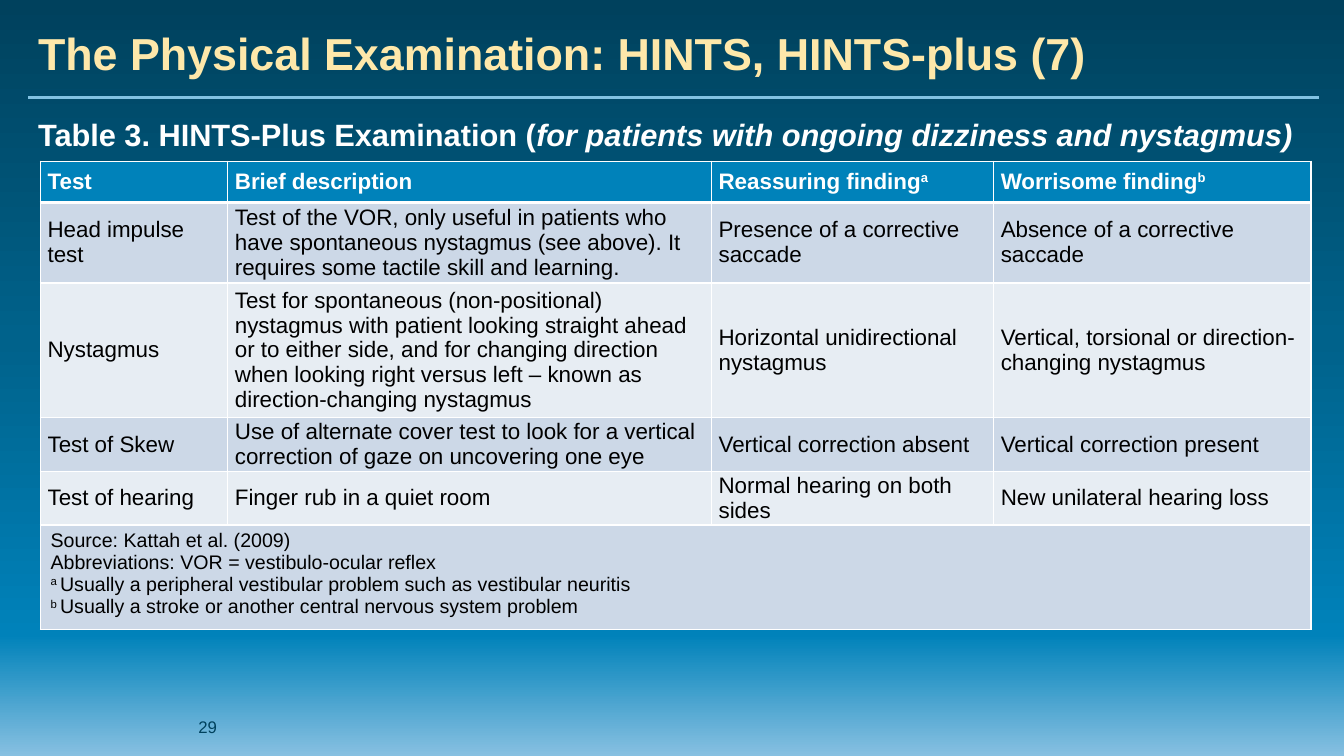
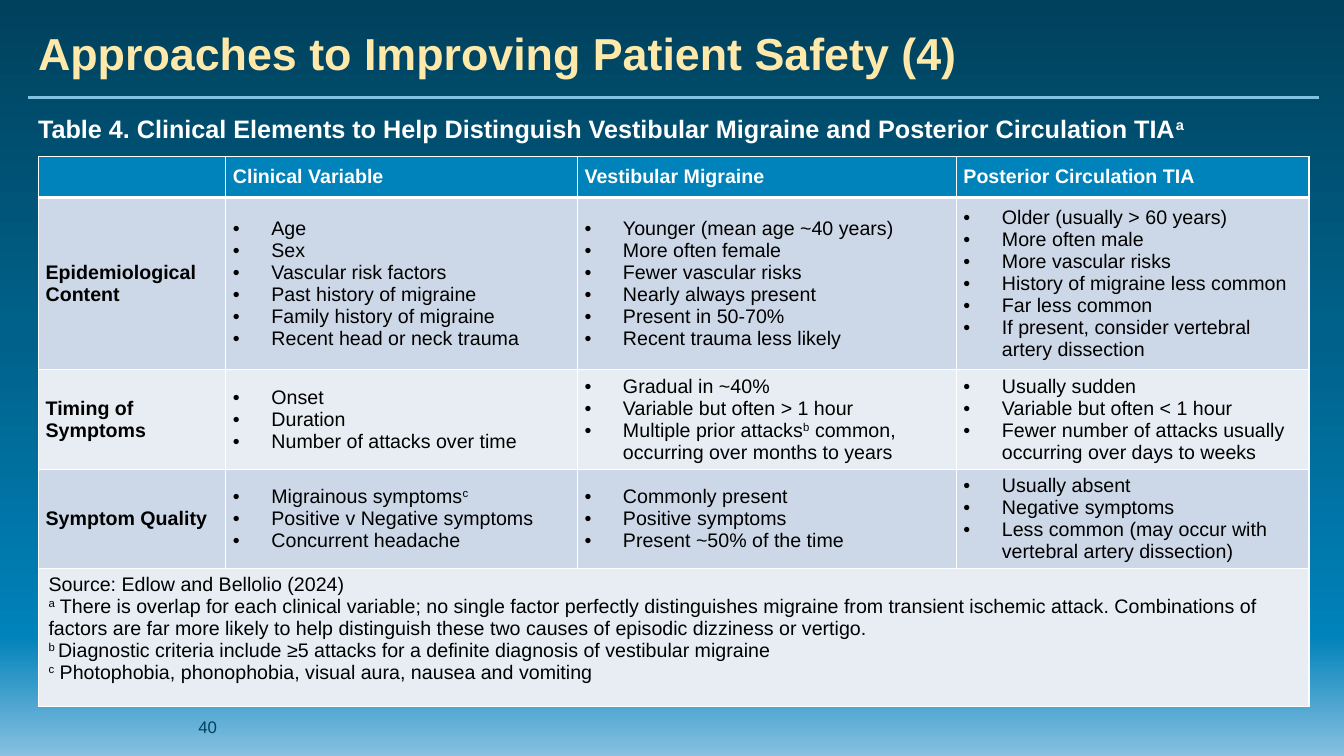
"""Build two table slides on the examination and diagnosis of dizziness."""
from lxml import etree
from pptx import Presentation
from pptx.dml.color import RGBColor
from pptx.enum.shapes import MSO_CONNECTOR as Connector
from pptx.enum.text import MSO_ANCHOR as Anchor
from pptx.oxml.ns import qn
from pptx.util import Cm, Pt

NAVY = RGBColor(0x00, 0x41, 0x5D)
TEAL = RGBColor(0x00, 0x62, 0x8B)
BLUE = RGBColor(0x00, 0x82, 0xBA)
SKY = RGBColor(0x87, 0xC0, 0xE1)
RULE_BLUE = RGBColor(0x81, 0xC2, 0xE3)
CREAM = RGBColor(0xFE, 0xE8, 0xAA)
WHITE = RGBColor(0xFF, 0xFF, 0xFF)
BLACK = RGBColor(0x00, 0x00, 0x00)
BANDS = (RGBColor(0xCC, 0xD8, 0xE7), RGBColor(0xE7, 0xED, 0xF3))

FONT = "Arial"
GRADIENT = ((0, NAVY, 100), (45, TEAL, 100), (84, BLUE, 100), (100, SKY, 91))
LEFT, WIDTH = 0.71, 32.54
BULLET_INDENT = Cm(0.97)
THIN, THICK = Pt(1), Pt(3)


def write_text(frame, text, size=14, color=BLACK, bold=False, bullet=False, spacing=None):
    """Write one paragraph per line; ^ encloses superscript and * encloses italics."""
    for index, line in enumerate(text.split("\n")):
        paragraph = frame.add_paragraph() if index else frame.paragraphs[0]
        if bullet:
            properties = paragraph._p.get_or_add_pPr()
            properties.set("marL", str(BULLET_INDENT))
            properties.set("indent", str(-BULLET_INDENT))
            etree.SubElement(properties, qn("a:buFont")).set("typeface", FONT)
            etree.SubElement(properties, qn("a:buChar")).set("char", "•")
        if spacing:
            paragraph.line_spacing = spacing
        for raised, segment in enumerate(line.split("^")):
            for slanted, words in enumerate(segment.split("*")):
                if not words:
                    continue
                run = paragraph.add_run()
                run.text = words
                font = run.font
                font.name, font.size, font.bold = FONT, Pt(size), bold
                font.color.rgb = color
                if slanted % 2:
                    font.italic = True
                if raised % 2:
                    run._r.get_or_add_rPr().set("baseline", "30000")


def set_borders(cell, top=THIN, bottom=THIN):
    """Draw white borders round a table cell."""
    properties = cell._tc.get_or_add_tcPr()
    sides = (("L", THIN), ("R", THIN), ("T", top), ("B", bottom))
    for index, (side, width) in enumerate(sides):
        line = etree.Element(qn(f"a:ln{side}"), w=str(width))
        fill = etree.SubElement(line, qn("a:solidFill"))
        etree.SubElement(fill, qn("a:srgbClr"), val=str(WHITE))
        properties.insert(index, line)


class Deck:
    """Hold the shared style and the current slide."""

    def __init__(self):
        """Start a widescreen presentation."""
        self.presentation = Presentation()
        self.presentation.slide_width = Cm(33.87)
        self.presentation.slide_height = Cm(19.05)
        self.slide = None

    def add_slide(self, title, number):
        """Add a slide with its background, title, rule and number."""
        self.slide = self.presentation.slides.add_slide(self.presentation.slide_layouts[6])
        self.paint_background()
        self.add_rule(2.46)
        self.add_text(title, LEFT, 0.3, WIDTH, 2.06, Anchor.MIDDLE, size=32, color=CREAM, bold=True)
        self.add_text(number, 4.75, 17.81, 5.92, 1.02, Anchor.MIDDLE, size=12, color=NAVY)

    def paint_background(self):
        """Fill the background with the vertical gradient."""
        fill = self.slide.background.fill
        fill.gradient()
        fill.gradient_angle = 270
        stops = self.slide._element.find(".//" + qn("a:gsLst"))
        for stop in list(stops):
            stops.remove(stop)
        for position, color, opacity in GRADIENT:
            stop = etree.SubElement(stops, qn("a:gs"), pos=str(position * 1000))
            shade = etree.SubElement(stop, qn("a:srgbClr"), val=str(color))
            if opacity < 100:
                etree.SubElement(shade, qn("a:alpha"), val=str(opacity * 1000))

    def add_rule(self, top):
        """Draw the line under the title."""
        rule = self.slide.shapes.add_connector(
            Connector.STRAIGHT, Cm(LEFT), Cm(top), Cm(LEFT + WIDTH), Cm(top))
        rule.line.color.rgb = RULE_BLUE
        rule.line.width = Pt(2)
        etree.SubElement(rule._element.spPr, qn("a:effectLst"))

    def add_text(self, text, left, top, width, height, anchor=Anchor.TOP, **style):
        """Add a wrapping text box."""
        frame = self.slide.shapes.add_textbox(Cm(left), Cm(top), Cm(width), Cm(height)).text_frame
        frame.word_wrap = True
        frame.vertical_anchor = anchor
        write_text(frame, text, **style)

    def add_caption(self, text, size, spacing=None):
        """Add the caption above a table."""
        self.add_text(text, LEFT, 2.72, WIDTH, 1.2, size=size, color=WHITE, bold=True, spacing=spacing)

    def add_table(self, rows, notes, left, top, widths, heights, size, bulleted=False):
        """Add a banded table whose last row is one merged cell of notes."""
        table = self.slide.shapes.add_table(
            len(heights), len(widths), Cm(left), Cm(top), Cm(sum(widths)), Cm(sum(heights))).table
        table.horz_banding = False
        for column, width in zip(table.columns, widths):
            column.width = Cm(width)
        for row, height in zip(table.rows, heights):
            row.height = Cm(height)
        last = len(rows)
        table.cell(last, 0).merge(table.cell(last, len(widths) - 1))
        for row_index, row in enumerate(table.rows):
            header = row_index == 0
            for column_index, cell in enumerate(row.cells):
                cell.fill.solid()
                cell.fill.fore_color.rgb = BLUE if header else BANDS[(row_index - 1) % 2]
                set_borders(cell, top=THICK if row_index == 1 else THIN,
                            bottom=THICK if header else THIN)
                if row_index == last:
                    continue
                cell.vertical_anchor = Anchor.MIDDLE
                cell.margin_left = cell.margin_right = Cm(0.18)
                cell.margin_top = cell.margin_bottom = 0
                label = column_index == 0
                write_text(cell.text_frame, rows[row_index][column_index], size=size,
                           color=WHITE if header else BLACK,
                           bold=header or (bulleted and label),
                           bullet=bulleted and not header and not label)
        write_text(table.cell(last, 0).text_frame, notes)


HINTS_ROWS = (
    ("Test", "Brief description", "Reassuring finding^a^", "Worrisome finding^b^"),
    ("Head impulse test",
     "Test of the VOR, only useful in patients who have spontaneous nystagmus (see above). "
     "It requires some tactile skill and learning.",
     "Presence of a corrective saccade", "Absence of a corrective saccade"),
    ("Nystagmus",
     "Test for spontaneous (non-positional) nystagmus with patient looking straight ahead "
     "or to either side, and for changing direction when looking right versus left – known "
     "as direction-changing nystagmus",
     "Horizontal unidirectional nystagmus",
     "Vertical, torsional or direction-changing nystagmus"),
    ("Test of Skew",
     "Use of alternate cover test to look for a vertical correction of gaze on uncovering one eye",
     "Vertical correction absent", "Vertical correction present"),
    ("Test of hearing", "Finger rub in a quiet room",
     "Normal hearing on both sides", "New unilateral hearing loss"),
)
HINTS_NOTES = (
    "Source: Kattah et al. (2009)\n"
    "Abbreviations: VOR = vestibulo-ocular reflex\n"
    "^a ^Usually a peripheral vestibular problem such as vestibular neuritis\n"
    "^b ^Usually a stroke or another central nervous system problem"
)
MIGRAINE_ROWS = (
    ("", "Clinical Variable", "Vestibular Migraine", "Posterior Circulation TIA"),
    ("Epidemiological Content",
     "Age\nSex\nVascular risk factors\nPast history of migraine\n"
     "Family history of migraine\nRecent head or neck trauma",
     "Younger (mean age ~40 years)\nMore often female\nFewer vascular risks\n"
     "Nearly always present\nPresent in 50-70%\nRecent trauma less likely",
     "Older (usually > 60 years)\nMore often male\nMore vascular risks\n"
     "History of migraine less common\nFar less common\n"
     "If present, consider vertebral artery dissection"),
    ("Timing of Symptoms",
     "Onset\nDuration\nNumber of attacks over time",
     "Gradual in ~40%\nVariable but often > 1 hour\n"
     "Multiple prior attacks^b^ common, occurring over months to years",
     "Usually sudden\nVariable but often < 1 hour\n"
     "Fewer number of attacks usually occurring over days to weeks"),
    ("Symptom Quality",
     "Migrainous symptoms^c^\nPositive v Negative symptoms\nConcurrent headache",
     "Commonly present\nPositive symptoms\nPresent ~50% of the time",
     "Usually absent\nNegative symptoms\n"
     "Less common (may occur with vertebral artery dissection)"),
)
MIGRAINE_NOTES = (
    "Source: Edlow and Bellolio (2024)\n"
    "^a^ There is overlap for each clinical variable; no single factor perfectly distinguishes "
    "migraine from transient ischemic attack. Combinations of factors are far more likely to "
    "help distinguish these two causes of episodic dizziness or vertigo.\n"
    "^b ^Diagnostic criteria include ≥5 attacks for a definite diagnosis of vestibular migraine\n"
    "^c^ Photophobia, phonophobia, visual aura, nausea and vomiting"
)


def main():
    """Build both slides and save the presentation."""
    deck = Deck()
    deck.add_slide("The Physical Examination: HINTS, HINTS-plus (7)", "29")
    deck.add_caption(
        "Table 3. HINTS-Plus Examination (*for patients with ongoing dizziness and nystagmus)*",
        size=22, spacing=1.07)
    deck.add_table(HINTS_ROWS, HINTS_NOTES, 1.02, 4.06, widths=(4.72, 12.19, 7.11, 8),
                   heights=(1.04, 1.88, 3.15, 1.26, 1.26, 2.46), size=16)

    deck.add_slide("Approaches to Improving Patient Safety (4)", "40")
    deck.add_caption(
        "Table 4. Clinical Elements to Help Distinguish Vestibular Migraine "
        "and Posterior Circulation TIA^a^", size=18)
    deck.add_table(MIGRAINE_ROWS, MIGRAINE_NOTES, 0.97, 3.94, widths=(4.72, 8.86, 9.55, 8.89),
                   heights=(1.04, 4.34, 2.51, 2.49, 3.48), size=14, bulleted=True)
    deck.presentation.save("out.pptx")


if __name__ == "__main__":
    main()
